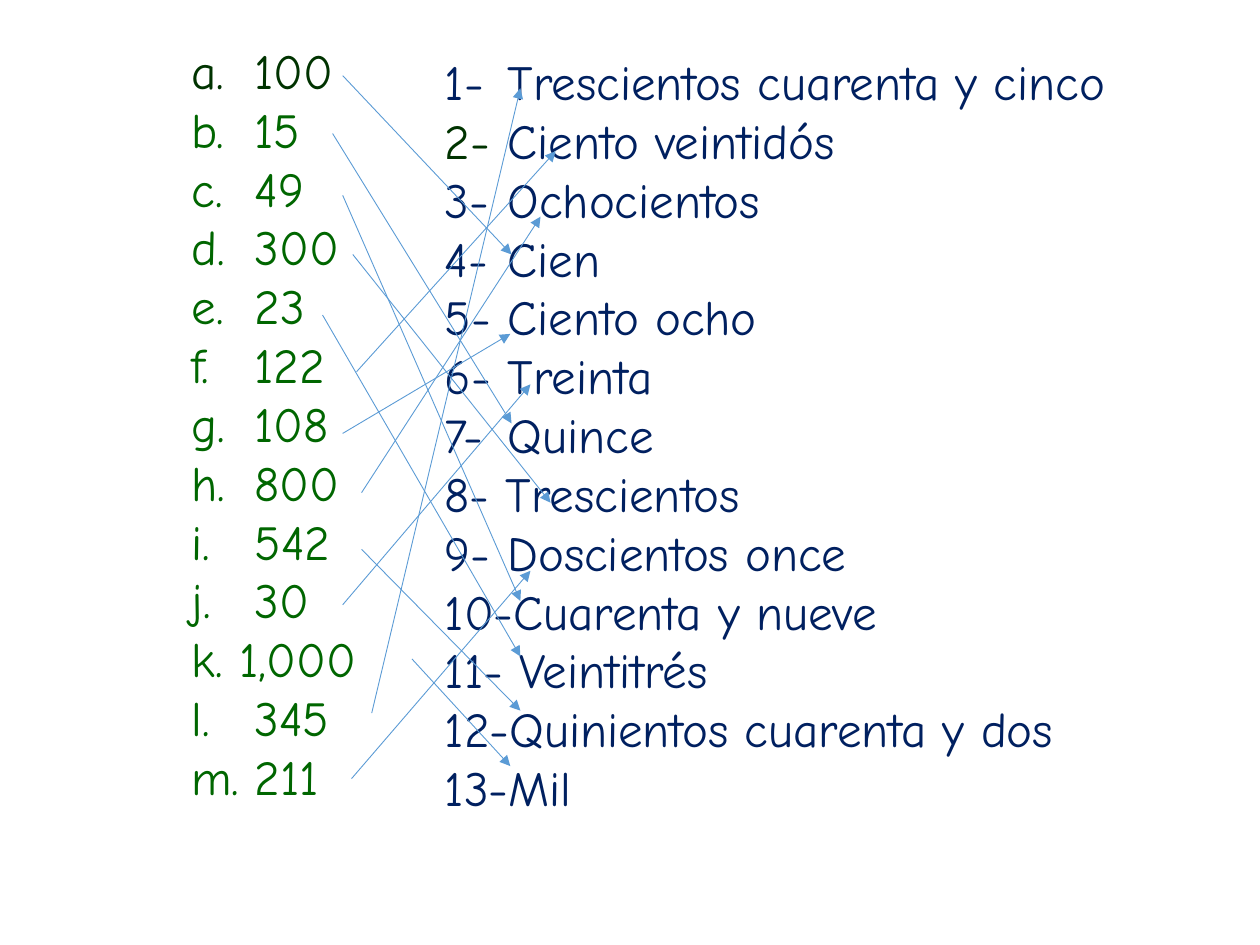
from dataclasses import dataclass

from lxml import etree
from pptx import Presentation
from pptx.dml.color import RGBColor
from pptx.enum.shapes import MSO_CONNECTOR
from pptx.enum.text import MSO_ANCHOR, MSO_AUTO_SIZE
from pptx.oxml.ns import qn
from pptx.util import Inches, Pt

STRAIGHT = MSO_CONNECTOR.STRAIGHT
TOP = MSO_ANCHOR.TOP
NO_AUTOFIT = MSO_AUTO_SIZE.NONE

COLORS = {"dark": "003300", "green": "006600", "navy": "002060", "arrow": "5B9BD5"}
FONT = "Comic Neue"
TEXT_SIZE = Pt(28)
TWO_CONTENT_LAYOUT = 3


@dataclass(frozen=True)
class Item:
    """A list entry; without a tab the entry follows its label directly."""
    label: str
    entry: str
    tab: float | None
    color: str
    label_color: str | None = None


@dataclass(frozen=True)
class Match:
    """An arrow from a number to its name."""
    start: tuple[float, float]
    end: tuple[float, float]


NUMBERS = [
    Item("a.", "100", 0.51, "dark"),
    Item("b.", "15", 0.63, "green"),
    Item("c.", "49", 0.63, "green"),
    Item("d.", "300", 0.51, "green"),
    Item("e.", "23", 0.63, "green"),
    Item("f.", "122", 0.38, "green"),
    Item("g.", "108", 0.51, "green"),
    Item("h.", "800", 0.51, "green"),
    Item("i.", "542", 0.52, "green"),
    Item("j.", "30", 0.65, "green"),
    Item("k.", " 1,000", None, "green"),
    Item("l.", "345", 0.52, "green"),
    Item("m.", "211", 0.63, "green"),
]

NAMES = [
    Item("1-", "Trescientos cuarenta y cinco", 0.56, "navy"),
    Item("2-", "Ciento veintidós", 0.61, "navy", "dark"),
    Item("3-", "Ochocientos", 0.61, "navy"),
    Item("4-", "Cien", 0.58, "navy"),
    Item("5-", "Ciento ocho", 0.61, "navy"),
    Item("6-", "Treinta", 0.62, "navy"),
    Item("7-", "Quince", 0.56, "navy"),
    Item("8-", " Trescientos", None, "navy"),
    Item("9-", "Doscientos once", 0.61, "navy"),
    Item("10-", "Cuarenta y nueve", None, "navy"),
    Item("11-", " Veintitrés", None, "navy"),
    Item("12-", "Quinientos cuarenta y dos", None, "navy"),
    Item("13-", "Mil", None, "navy"),
]

MATCHES = [
    Match((2.72, 0.60), (4.06, 2.02)),
    Match((2.64, 1.06), (4.06, 3.36)),
    Match((2.72, 1.55), (4.13, 4.77)),
    Match((2.80, 2.02), (4.37, 3.99)),
    Match((2.56, 2.50), (4.13, 5.21)),
    Match((2.83, 2.95), (4.41, 1.20)),
    Match((2.72, 3.44), (4.05, 2.65)),
    Match((2.87, 3.91), (4.29, 1.72)),
    Match((2.87, 4.36), (4.13, 5.64)),
    Match((2.72, 4.80), (4.21, 3.05)),
    Match((3.27, 5.23), (4.05, 6.08)),
    Match((2.95, 5.66), (4.13, 0.70)),
    Match((2.79, 6.18), (4.21, 4.53)),
]


def add_run(paragraph, text: str, color: str) -> None:
    run = paragraph.add_run()
    run.text = text
    run.font.name = FONT
    run.font.size = TEXT_SIZE
    run.font.color.rgb = RGBColor.from_string(COLORS[color])


def write_item(paragraph, item: Item) -> None:
    paragraph.space_before = Pt(0)
    properties = paragraph._p.get_or_add_pPr()
    properties.set("marL", "0")
    properties.set("indent", "0")
    etree.SubElement(properties, qn("a:buNone"))
    if item.tab is None:
        gap = ""
    else:
        gap = "\t"
        stops = etree.SubElement(properties, qn("a:tabLst"))
        etree.SubElement(stops, qn("a:tab"), pos=str(Inches(item.tab)), algn="l")
    if item.label_color:
        add_run(paragraph, item.label, item.label_color)
        add_run(paragraph, gap + item.entry, item.color)
    else:
        add_run(paragraph, item.label + gap + item.entry, item.color)


def fill_list(placeholder, items: list[Item], left: float, top: float,
              width: float, height: float) -> None:
    placeholder.left, placeholder.top = Inches(left), Inches(top)
    placeholder.width, placeholder.height = Inches(width), Inches(height)
    frame = placeholder.text_frame
    frame.word_wrap = True
    frame.auto_size = NO_AUTOFIT
    frame.vertical_anchor = TOP
    for index, item in enumerate(items):
        write_item(frame.add_paragraph() if index else frame.paragraphs[0], item)


def draw_match(slide, match: Match) -> None:
    arrow = slide.shapes.add_connector(
        STRAIGHT, *(Inches(value) for value in match.start + match.end))
    arrow.line.color.rgb = RGBColor.from_string(COLORS["arrow"])
    arrow.line.width = Pt(0.5)
    etree.SubElement(arrow.line._get_or_add_ln(), qn("a:tailEnd"), type="triangle")
    etree.SubElement(arrow._element.spPr, qn("a:effectLst"))


def main() -> None:
    deck = Presentation()
    deck.slide_width, deck.slide_height = Inches(10), Inches(7.5)
    slide = deck.slides.add_slide(deck.slide_layouts[TWO_CONTENT_LAYOUT])
    title = slide.shapes.title.element
    title.getparent().remove(title)

    fill_list(slide.placeholders[1], NUMBERS, 1.42, 0.27, 2.91, 7.17)
    fill_list(slide.placeholders[2], NAMES, 3.43, 0.36, 6.14, 6.23)
    for match in MATCHES:
        draw_match(slide, match)
    deck.save("out.pptx")


if __name__ == "__main__":
    main()
